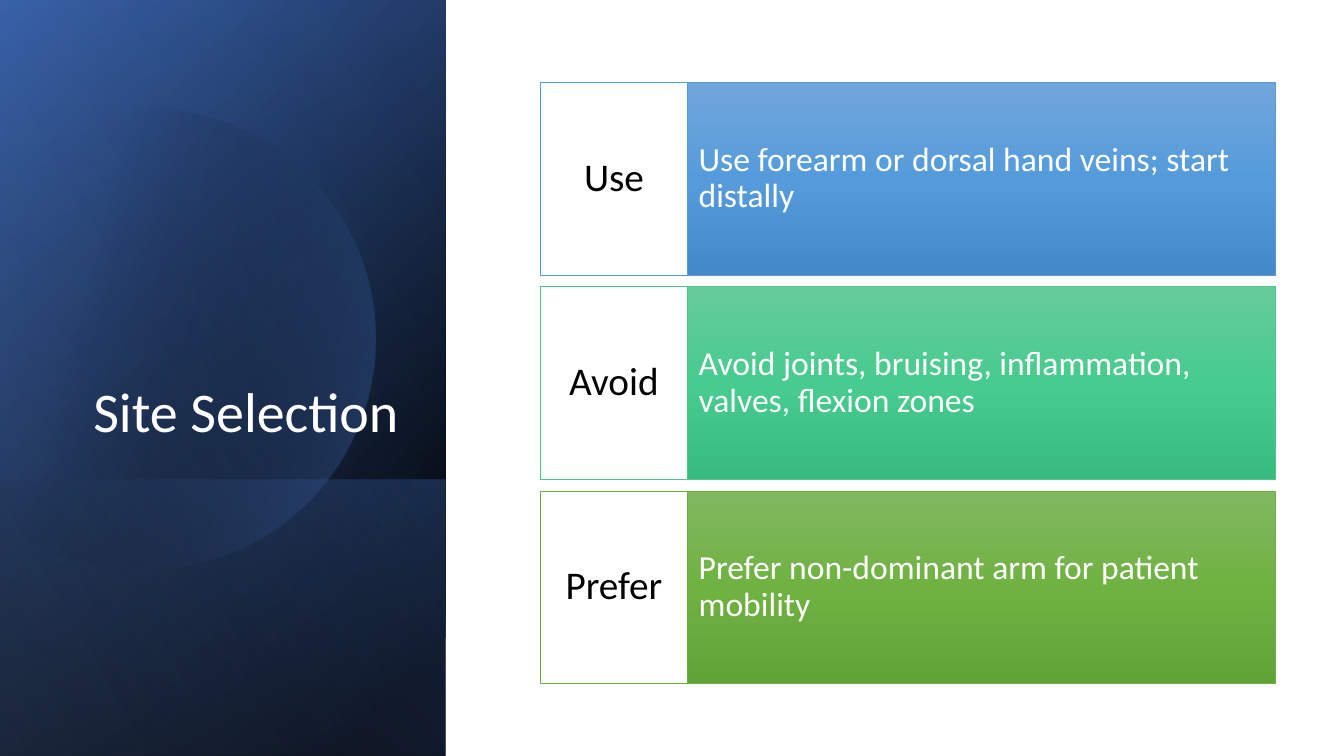
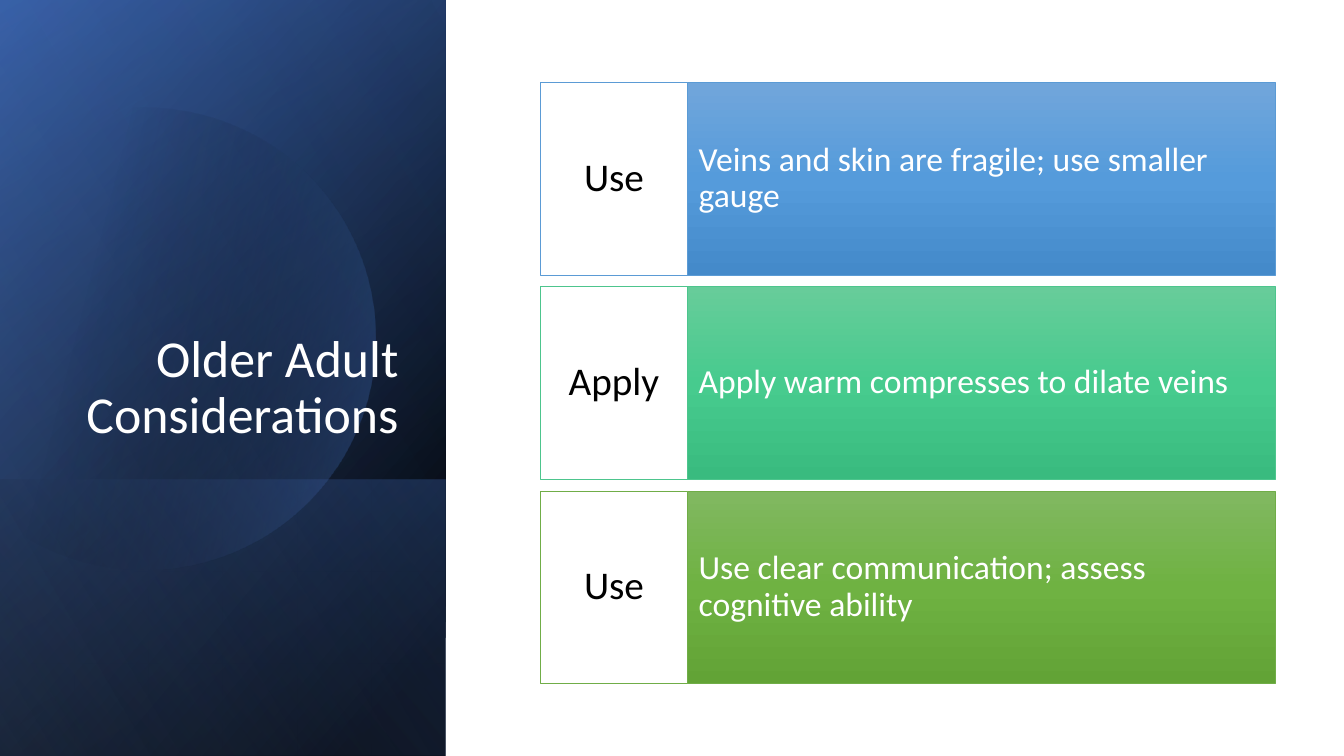
import math
import pptx
import pptx.dml.color
import pptx.enum.shapes
import pptx.enum.text
import pptx.oxml.ns
import pptx.util
from lxml import etree

Inches = pptx.util.Inches
Pt = pptx.util.Pt
qn = pptx.oxml.ns.qn
ALIGN = pptx.enum.text.PP_ALIGN
ANCHOR = pptx.enum.text.MSO_ANCHOR

FONT = "Calibri"
WHITE = "FFFFFF"
BLACK = "000000"

SLIDES = [
    ("Site Selection", 40, [
        ("Use", "Use forearm or dorsal hand veins; start distally"),
        ("Avoid", "Avoid joints, bruising, inflammation, valves, flexion zones"),
        ("Prefer", "Prefer non-dominant arm for patient mobility"),
    ]),
    ("Older Adult Considerations", 37, [
        ("Use", "Veins and skin are fragile; use smaller gauge"),
        ("Apply", "Apply warm compresses to dilate veins"),
        ("Use", "Use clear communication; assess cognitive ability"),
    ]),
]

ROW_STYLES = [
    ("5B9BD5", [(0, "71A6DB", 100), (50, "559BDB", 100), (100, "448ACA", 100)]),
    ("4DC58D", [(0, "67CC9A", 100), (50, "47CB8E", 100), (100, "39BB7F", 100)]),
    ("70AD47", [(0, "81B861", 100), (50, "6FB242", 100), (100, "62A336", 100)]),
]

PANEL_WIDTH, SLIDE_HEIGHT = 4.42, 7.5
BAND_HEIGHT = 2.74
PANEL = (0, 0, PANEL_WIDTH, SLIDE_HEIGHT)
BAND = (0, SLIDE_HEIGHT - BAND_HEIGHT, PANEL_WIDTH, BAND_HEIGHT)
PANEL_LAYERS = [
    (PANEL, 220, [(8, BLACK, 100), (100, "2F5597", 100)]),
    (PANEL, 240, [(0, BLACK, 0), (99, "4472C4", 46)]),
    (BAND, 140, [(2, "4472C4", 29), (100, BLACK, 30)]),
]
PANEL_SHEEN = (PANEL, 150, [(0, BLACK, 0), (99, "8FAADC", 11)])

DISC_CENTER = (1.43, 3.36)
DISC_RADIUS = 2.29
DISC_LEFT = -0.15
DISC_STEPS = 120
DISC_ANGLE = 14
DISC_STOPS = [(29, BLACK, 0), (100, "4472C4", 43)]

TITLE_BOX = (0.64, 1.84, 3.41, 2.62)
ROW_TOP, ROW_HEIGHT, ROW_PITCH = 0.82, 1.91, 2.025
LABEL_LEFT, LABEL_WIDTH, DETAIL_WIDTH = 5.36, 1.46, 5.83


def color(value):
    return pptx.dml.color.RGBColor.from_string(value)


def fill_gradient(shape, angle, stops):
    shape.fill.gradient()
    shape.fill.gradient_angle = 360 - angle
    stop_list = shape._element.spPr.find(".//" + qn("a:gsLst"))
    for stop in list(stop_list):
        stop_list.remove(stop)
    for position, value, opacity in stops:
        stop = etree.SubElement(stop_list, qn("a:gs"), pos=str(position * 1000))
        stop_color = etree.SubElement(stop, qn("a:srgbClr"), val=value)
        if opacity < 100:
            etree.SubElement(stop_color, qn("a:alpha"), val=str(opacity * 1000))


def add_rectangle(slide, box, line=None):
    shape = slide.shapes.add_shape(
        pptx.enum.shapes.MSO_SHAPE.RECTANGLE, *[Inches(length) for length in box])
    shape.shadow.inherit = False
    if line:
        shape.line.color.rgb = color(line)
        shape.line.width = Pt(0.5)
    else:
        shape.line.fill.background()
    return shape


def write_text(shape, text, size, value, align, anchor, insets):
    frame = shape.text_frame
    frame.word_wrap = True
    frame.vertical_anchor = anchor
    frame.margin_left = frame.margin_right = Inches(insets[0])
    frame.margin_top = frame.margin_bottom = Inches(insets[1])
    paragraph = frame.paragraphs[0]
    paragraph.alignment = align
    paragraph.line_spacing = 0.9
    run = paragraph.add_run()
    run.text = text
    run.font.name = FONT
    run.font.size = Pt(size)
    run.font.color.rgb = color(value)


def add_layer(slide, box, angle, stops):
    fill_gradient(add_rectangle(slide, box), angle, stops)


def add_disc(slide):
    center_x, center_y = DISC_CENTER
    limit = math.acos((DISC_LEFT - center_x) / DISC_RADIUS)
    angles = [limit * (2 * step / DISC_STEPS - 1) for step in range(DISC_STEPS + 1)]
    points = [(Inches(center_x + DISC_RADIUS * math.cos(angle)),
               Inches(center_y + DISC_RADIUS * math.sin(angle))) for angle in angles]
    builder = slide.shapes.build_freeform(*points[0])
    builder.add_line_segments(points[1:], close=True)
    disc = builder.convert_to_shape()
    disc.shadow.inherit = False
    disc.line.fill.background()
    fill_gradient(disc, DISC_ANGLE, DISC_STOPS)


def add_panel(slide, title, size):
    for layer in PANEL_LAYERS:
        add_layer(slide, *layer)
    add_disc(slide)
    add_layer(slide, *PANEL_SHEEN)
    title_box = slide.shapes.add_textbox(*[Inches(length) for length in TITLE_BOX])
    write_text(title_box, title, size, WHITE, ALIGN.RIGHT, ANCHOR.BOTTOM, (0.1, 0.05))


def add_row(slide, index, label, detail):
    line, stops = ROW_STYLES[index]
    top = ROW_TOP + index * ROW_PITCH
    detail_box = add_rectangle(
        slide, (LABEL_LEFT + LABEL_WIDTH, top, DETAIL_WIDTH, ROW_HEIGHT), line)
    fill_gradient(detail_box, 90, stops)
    write_text(detail_box, detail, 24, WHITE, ALIGN.LEFT, ANCHOR.MIDDLE, (0.11, 0.49))
    label_box = add_rectangle(slide, (LABEL_LEFT, top, LABEL_WIDTH, ROW_HEIGHT), line)
    label_box.fill.solid()
    label_box.fill.fore_color.rgb = color(WHITE)
    write_text(label_box, label, 28, BLACK, ALIGN.CENTER, ANCHOR.MIDDLE, (0.08, 0.19))


def main():
    presentation = pptx.Presentation()
    presentation.slide_width = Inches(13.33)
    presentation.slide_height = Inches(SLIDE_HEIGHT)
    for title, size, rows in SLIDES:
        slide = presentation.slides.add_slide(presentation.slide_layouts[6])
        add_panel(slide, title, size)
        for index, (label, detail) in enumerate(rows):
            add_row(slide, index, label, detail)
    presentation.save("out.pptx")


if __name__ == "__main__":
    main()
